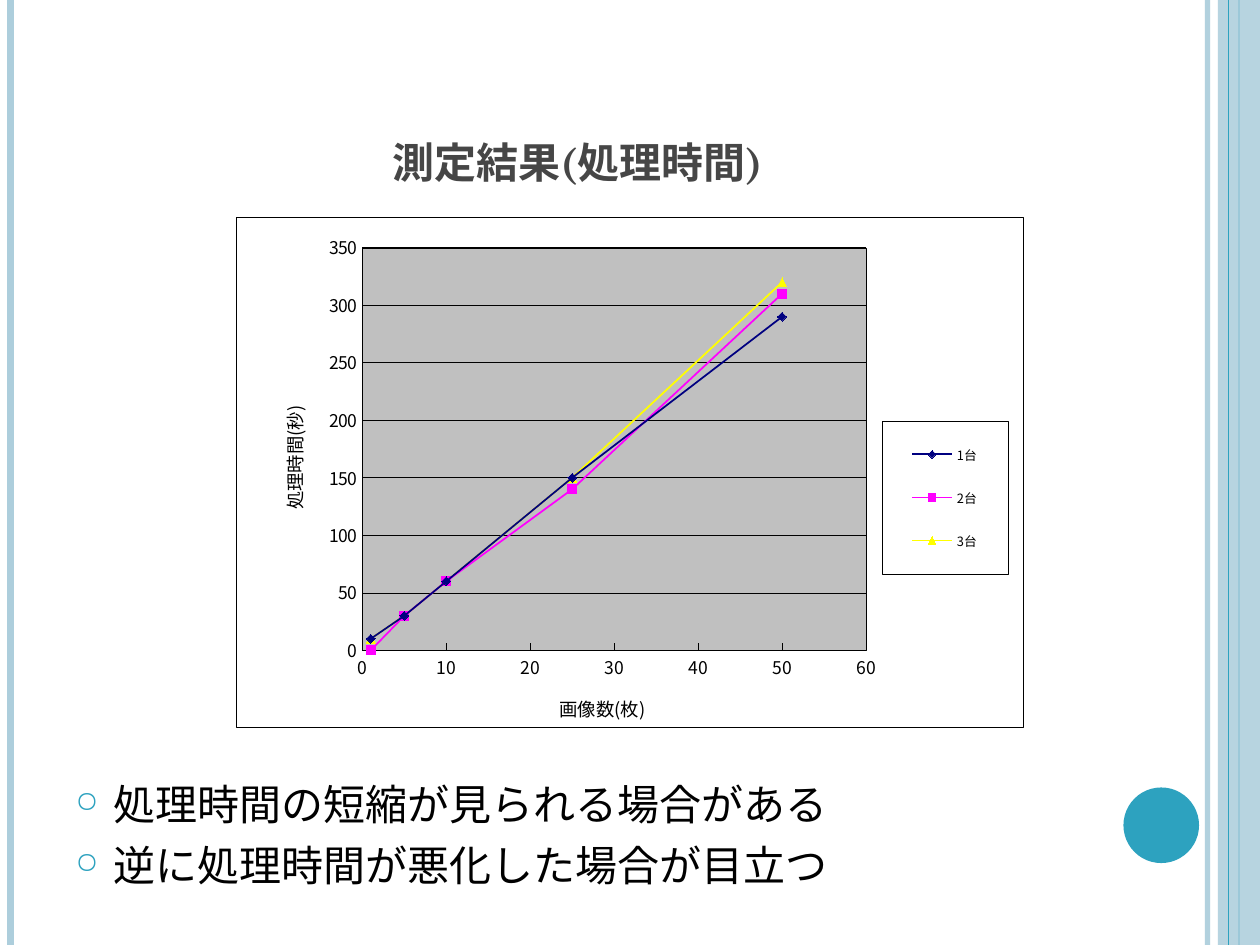
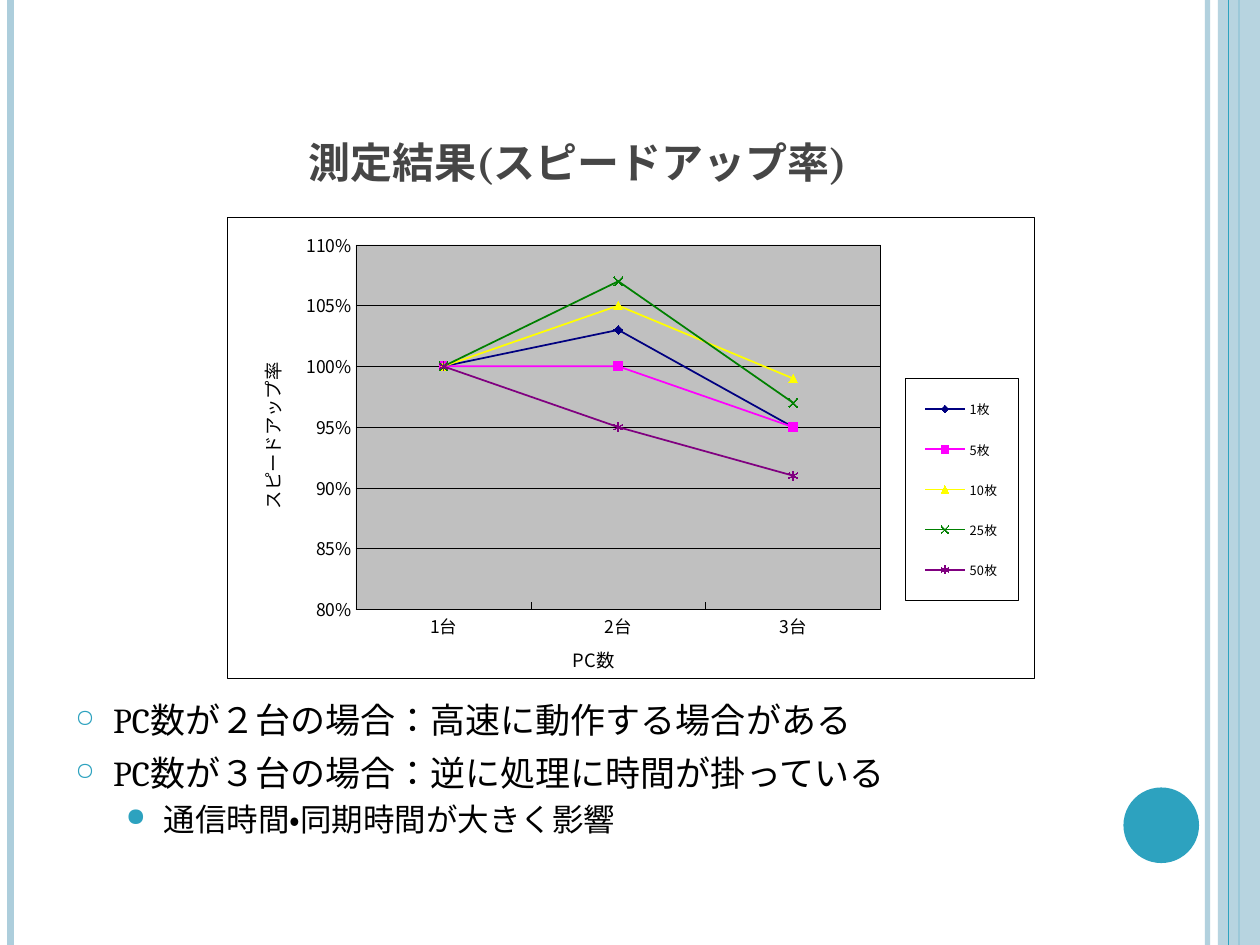
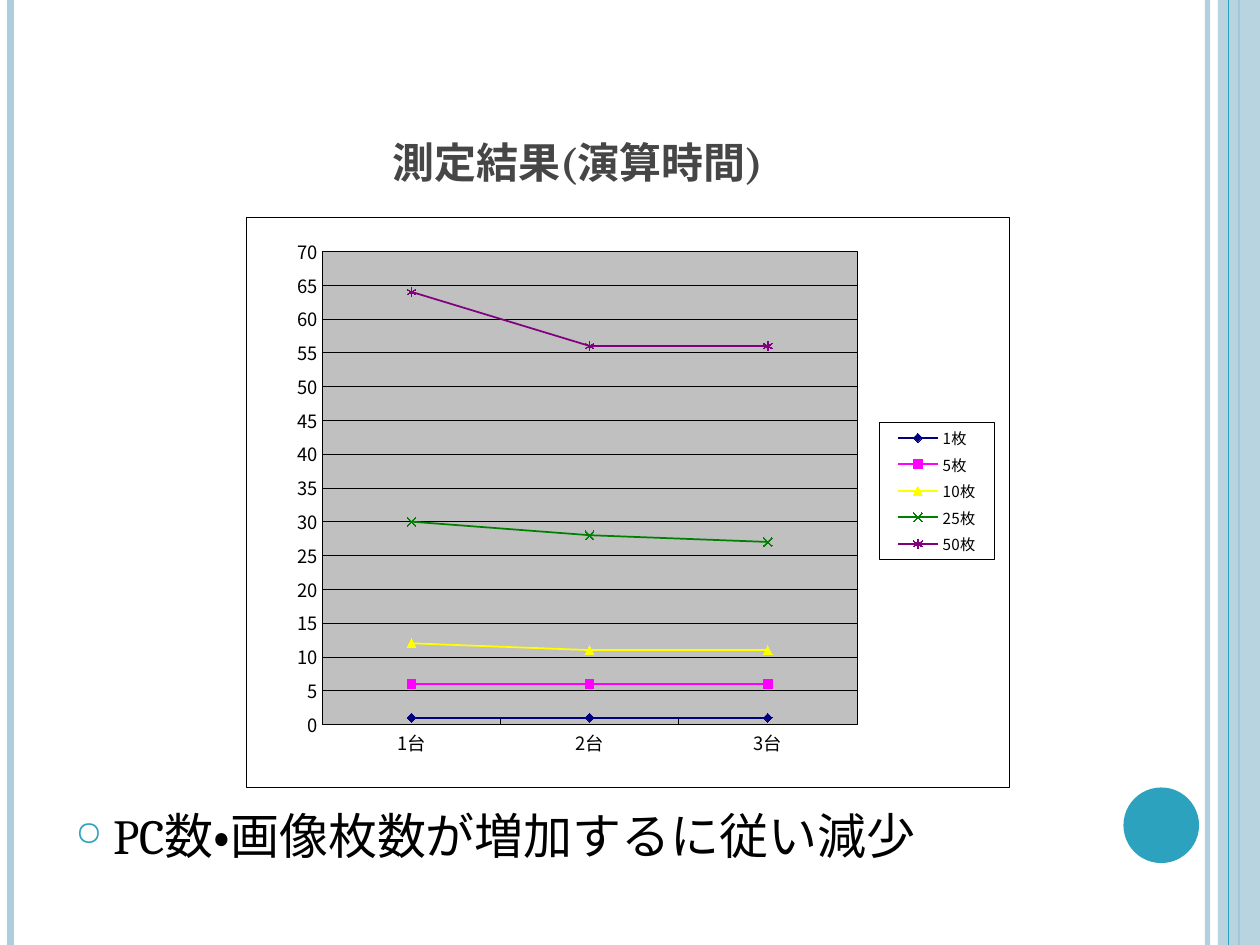
import pptx
import pptx.chart.data
import pptx.dml.color
import pptx.enum.chart
import pptx.enum.lang
import pptx.enum.shapes
import pptx.enum.text
import pptx.oxml
import pptx.oxml.ns
import pptx.util

Pt = pptx.util.Pt
RGBColor = pptx.dml.color.RGBColor
qn = pptx.oxml.ns.qn
ChartType = pptx.enum.chart.XL_CHART_TYPE
Marker = pptx.enum.chart.XL_MARKER_STYLE

TEAL = RGBColor(0x2D, 0xA2, 0xBF)
PALE = RGBColor(0xAD, 0xCE, 0xDC)
GRAY = RGBColor(0x46, 0x46, 0x46)
BLACK = RGBColor(0, 0, 0)
WHITE = RGBColor(255, 255, 255)
SILVER = RGBColor(0xC0, 0xC0, 0xC0)
NAVY = RGBColor(0, 0, 0x80)
MAGENTA = RGBColor(255, 0, 255)
YELLOW = RGBColor(255, 255, 0)
GREEN = RGBColor(0, 0x80, 0)
PURPLE = RGBColor(0x80, 0, 0x80)

TEXT_FONT = "Cambria"
CHART_FONT = "Noto Sans CJK JP"
SERIES_STYLES = [
    (NAVY, Marker.DIAMOND),
    (MAGENTA, Marker.SQUARE),
    (YELLOW, Marker.TRIANGLE),
    (GREEN, Marker.X),
    (PURPLE, Marker.STAR),
]
BANDS = [(690, PALE, 3, 93), (6, PALE, 4.5, 100), (708, TEAL, 1.5, 100), (702, TEAL, 0.75, 100)]
BULLETS = [("○", 70, 21.6, 6), ("●", 80, 50.4, 3.6)]
MACHINES = ["1台", "2台", "3台"]
SHEETS = [1, 5, 10, 25, 50]
SHEET_NAMES = [f"{count}枚" for count in SHEETS]

FRAME = (
    '<c:spPr {ns}><a:solidFill><a:srgbClr val="{fill}"/></a:solidFill><a:ln w="3175">'
    '<a:solidFill><a:srgbClr val="000000"/></a:solidFill></a:ln></c:spPr>'
)
LAYOUT = (
    '<c:layout {ns}><c:manualLayout>{target}<c:xMode val="edge"/><c:yMode val="edge"/>'
    '<c:x val="{box[0]}"/><c:y val="{box[1]}"/><c:w val="{box[2]}"/><c:h val="{box[3]}"/>'
    '</c:manualLayout></c:layout>'
)

SLIDES = [
    dict(
        title="測定結果(処理時間)",
        points=[
            ("処理時間の短縮が見られる場合がある", 24, 0),
            ("逆に処理時間が悪化した場合が目立つ", 24, 0),
        ],
        bottom=1.5,
        kind=ChartType.XY_SCATTER_LINES,
        place=(135, 124, 450, 291.5),
        plot=(0.16, 0.06, 0.64, 0.79),
        legend=(0.82, 0.4, 0.16, 0.3),
        sizes=(10, 7.3),
        axis_titles=("画像数(枚)", "処理時間(秒)"),
        scale=(0, 350, 50),
        number_format="General",
        series=dict(zip(MACHINES, [
            (10, 30, 60, 150, 290),
            (0, 30, 60, 140, 310),
            (10, 30, 60, 150, 320),
        ])),
    ),
    dict(
        title="測定結果(スピードアップ率)",
        points=[
            ("PC数が２台の場合：高速に動作する場合がある", 20, 0),
            ("PC数が３台の場合：逆に処理に時間が掛っている", 20, 0),
            ("通信時間・同期時間が大きく影響", 18, 1),
        ],
        bottom=31.5,
        kind=ChartType.LINE_MARKERS,
        place=(129.5, 124, 461.5, 264),
        plot=(0.16, 0.06, 0.65, 0.79),
        legend=(0.84, 0.35, 0.14, 0.48),
        sizes=(10, 7.3),
        axis_titles=("PC数", "スピードアップ率"),
        scale=(0.8, 1.1, 0.05),
        number_format="0%",
        series=dict(zip(SHEET_NAMES, [
            (1, 1.03, 0.95),
            (1, 1, 0.95),
            (1, 1.05, 0.99),
            (1, 1.07, 0.97),
            (1, 0.95, 0.91),
        ])),
    ),
    dict(
        title="測定結果(演算時間)",
        points=[("PC数・画像枚数が増加するに従い減少", 28, 0)],
        bottom=16,
        kind=ChartType.LINE_MARKERS,
        place=(140.5, 124, 436.5, 326),
        plot=(0.1, 0.06, 0.7, 0.83),
        legend=(0.83, 0.36, 0.15, 0.24),
        sizes=(10.5, 8.7),
        axis_titles=(None, None),
        scale=(0, 70, 5),
        number_format="General",
        series=dict(zip(SHEET_NAMES, [
            (1, 1, 1),
            (6, 6, 6),
            (12, 11, 11),
            (30, 28, 27),
            (64, 56, 56),
        ])),
    ),
]


def write(para, text, size, font=TEXT_FONT, color=BLACK, bold=False):
    span = para.add_run()
    span.text = text
    span.font.size = Pt(size)
    span.font.name = font
    span.font.bold = bold
    span.font.color.rgb = color
    span.font.language_id = pptx.enum.lang.MSO_LANGUAGE_ID.JAPANESE
    return span


def make(template, **values):
    return pptx.oxml.parse_xml(template.format(ns=pptx.oxml.ns.nsdecls("a", "c"), **values))


deck = pptx.Presentation()
deck.slide_width = Pt(720)
deck.slide_height = Pt(540)

for content in SLIDES:
    page = deck.slides.add_slide(deck.slide_layouts[5])

    for left, color, width, opacity in BANDS:
        if color == TEAL and width < 1:
            continue
        band = page.shapes.add_connector(
            pptx.enum.shapes.MSO_CONNECTOR.STRAIGHT, Pt(left), Pt(0), Pt(left), Pt(540))
        band.line.color.rgb = color
        band.line.width = Pt(width)
        if opacity < 100:
            tint = band.element.find(".//" + qn("a:srgbClr"))
            tint.append(make('<a:alpha {ns} val="{val}"/>', val=opacity * 1000))
        band.element.spPr.append(make("<a:effectLst {ns}/>"))

    for preset, place, color, opacity in [
        (pptx.enum.shapes.MSO_SHAPE.RECTANGLE, (696, 0, 24, 540), PALE, 87),
        (pptx.enum.shapes.MSO_SHAPE.OVAL, (642, 450, 43.2, 43.2), TEAL, 100),
    ]:
        shape = page.shapes.add_shape(preset, *map(Pt, place))
        shape.shadow.inherit = False
        shape.fill.solid()
        shape.fill.fore_color.rgb = color
        shape.line.fill.background()
        if opacity < 100:
            tint = shape.element.find(".//" + qn("a:srgbClr"))
            tint.append(make('<a:alpha {ns} val="{val}"/>', val=opacity * 1000))

    left, color, width, opacity = BANDS[-1]
    edge = page.shapes.add_connector(
        pptx.enum.shapes.MSO_CONNECTOR.STRAIGHT, Pt(left), Pt(0), Pt(left), Pt(540))
    edge.line.color.rgb = color
    edge.line.width = Pt(width)
    edge.element.spPr.append(make("<a:effectLst {ns}/>"))

    title = page.shapes.title
    title.left, title.top, title.width, title.height = map(Pt, (36, 21.6, 588, 90))
    title.text_frame.auto_size = pptx.enum.text.MSO_AUTO_SIZE.NONE
    title.text_frame.vertical_anchor = pptx.enum.text.MSO_ANCHOR.BOTTOM
    para = title.text_frame.paragraphs[0]
    para.alignment = pptx.enum.text.PP_ALIGN.CENTER
    span = write(para, content["title"], 30, color=GRAY, bold=True)
    span.font._element.set("cap", "small")

    box = page.shapes.add_textbox(*map(Pt, (36, 126, 588, 384)))
    box.text_frame.word_wrap = True
    box.text_frame.vertical_anchor = pptx.enum.text.MSO_ANCHOR.BOTTOM
    box.text_frame.margin_bottom = Pt(content["bottom"])
    for index, (text, size, level) in enumerate(content["points"]):
        para = box.text_frame.add_paragraph() if index else box.text_frame.paragraphs[0]
        symbol, percent, indent, gap = BULLETS[level]
        para.level = level
        para.space_before = Pt(gap)
        para.line_spacing = Pt(size * 1.2)
        write(para, text, size)
        properties = para._p.get_or_add_pPr()
        properties.set("marL", str(Pt(indent)))
        properties.set("indent", str(-Pt(21.6)))
        properties.append(make(
            '<a:buClr {ns}><a:srgbClr val="{color}"/></a:buClr>', color=TEAL))
        properties.append(make('<a:buSzPct {ns} val="{val}"/>', val=percent * 1000))
        properties.append(make('<a:buChar {ns} char="{char}"/>', char=symbol))

    scatter = content["kind"] == ChartType.XY_SCATTER_LINES
    if scatter:
        data = pptx.chart.data.XyChartData()
        for name, values in content["series"].items():
            series = data.add_series(name)
            for count, value in zip(SHEETS, values):
                series.add_data_point(count, value)
    else:
        data = pptx.chart.data.CategoryChartData()
        data.categories = MACHINES
        for name, values in content["series"].items():
            data.add_series(name, values)

    chart = page.shapes.add_chart(content["kind"], *map(Pt, content["place"]), data).chart
    axis_size, legend_size = content["sizes"]
    chart.has_title = False
    chart.has_legend = True
    chart.legend.position = pptx.enum.chart.XL_LEGEND_POSITION.RIGHT
    chart.legend.include_in_layout = False
    chart.plots[0].vary_by_categories = False

    low, high, step = content["scale"]
    value_axis = chart.value_axis
    value_axis.minimum_scale, value_axis.maximum_scale, value_axis.major_unit = low, high, step
    value_axis.tick_labels.number_format = content["number_format"]
    value_axis.tick_labels.number_format_is_linked = False
    if scatter:
        chart.category_axis.minimum_scale = 0
        chart.category_axis.maximum_scale = 60
        chart.category_axis.major_unit = 10

    for axis, text in zip((chart.category_axis, value_axis), content["axis_titles"]):
        axis.has_major_gridlines = axis is value_axis
        axis.major_tick_mark = pptx.enum.chart.XL_TICK_MARK.INSIDE
        axis.minor_tick_mark = pptx.enum.chart.XL_TICK_MARK.NONE
        axis.format.line.color.rgb = BLACK
        axis.format.line.width = Pt(0.25)
        axis.has_title = text is not None
        if text:
            write(axis.axis_title.text_frame.paragraphs[0], text, 10.5, font=CHART_FONT)
    value_axis.major_gridlines.format.line.color.rgb = BLACK
    value_axis.major_gridlines.format.line.width = Pt(0.25)

    for font, size in [
        (chart.font, legend_size),
        (chart.legend.font, legend_size),
        (chart.category_axis.tick_labels.font, axis_size),
        (value_axis.tick_labels.font, axis_size),
    ]:
        font.name = CHART_FONT
        font.size = Pt(size)
        font.bold = False
        font.color.rgb = BLACK

    for series, (color, style) in zip(chart.plots[0].series, SERIES_STYLES):
        series.format.line.color.rgb = color
        series.format.line.width = Pt(1)
        if not scatter:
            series.smooth = False
        series.marker.style = style
        series.marker.size = 5
        series.marker.format.line.color.rgb = color
        if style in (Marker.X, Marker.STAR):
            series.marker.format.fill.background()
        else:
            series.marker.format.fill.solid()
            series.marker.format.fill.fore_color.rgb = color

    plot_area = chart.element.find(".//" + qn("c:plotArea"))
    legend = chart.element.find(".//" + qn("c:legend"))
    for part in (plot_area, legend):
        for layout in part.findall(qn("c:layout")):
            part.remove(layout)
    plot_area.insert(0, make(
        LAYOUT, target='<c:layoutTarget val="inner"/>', box=content["plot"]))
    plot_area.append(make(FRAME, fill=SILVER))
    overlay = legend.find(qn("c:overlay"))
    overlay.addprevious(make(LAYOUT, target="", box=content["legend"]))
    overlay.addnext(make(FRAME, fill=WHITE))
    chart.element.find(qn("c:chart")).addnext(make(FRAME, fill=WHITE))

deck.save("out.pptx")
